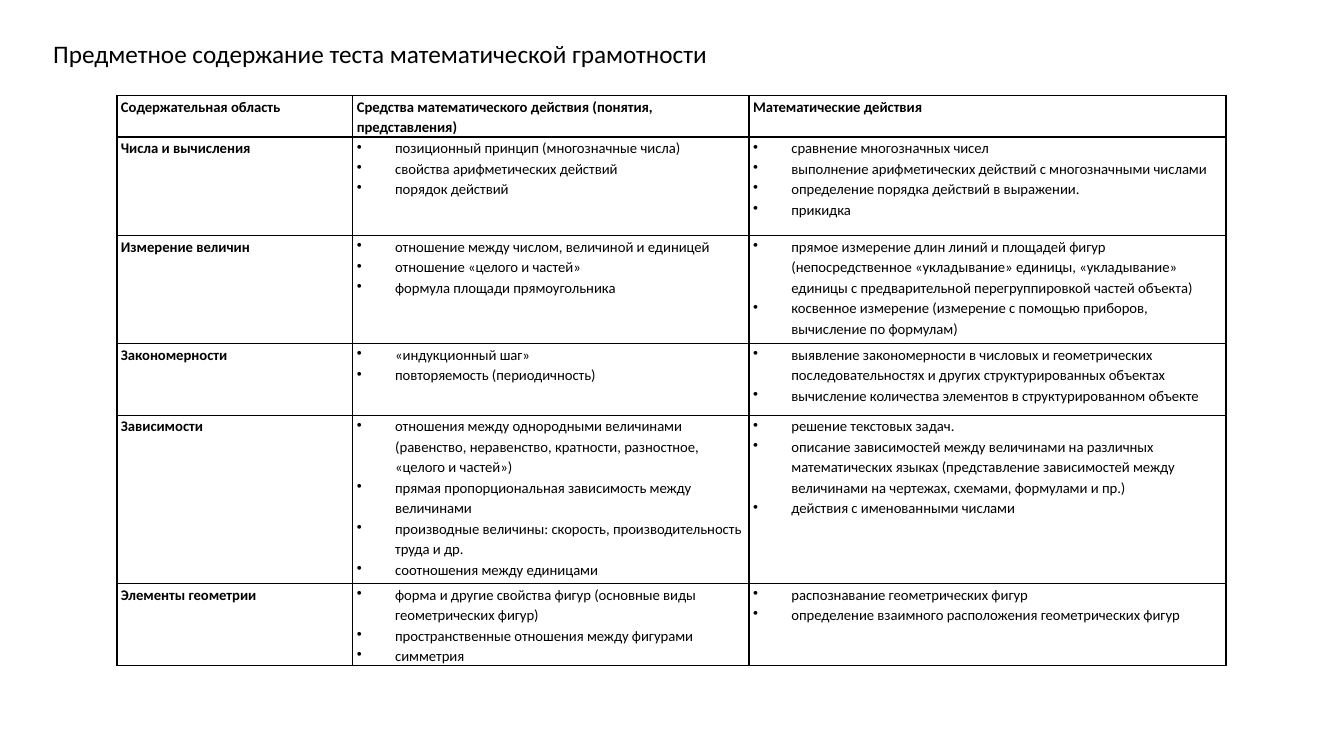
import dataclasses

import lxml.etree
import pptx
import pptx.dml.color
import pptx.enum.text
import pptx.oxml.ns
import pptx.util

PX = 9144  # EMU per px, 100 px to the inch
FONT = "Calibri"
BLACK = pptx.dml.color.RGBColor(0x00, 0x00, 0x00)
TITLE = "Предметное содержание теста математической грамотности"
COLUMN_WIDTHS = (234, 393, 473)
CELL_MARGIN = 4
BULLET_INDENT = 38
BORDER_WIDTH = pptx.util.Pt(1)


@dataclasses.dataclass(frozen=True)
class ContentArea:
    name: str
    height: int
    means: tuple[str, ...]
    actions: tuple[str, ...]


HEADER_HEIGHT = 41
HEADERS = (
    "Содержательная область",
    "Средства математического действия (понятия, представления)",
    "Математические действия",
)
AREAS = (
    ContentArea(
        "Числа и вычисления", 98,
        ("позиционный принцип (многозначные числа)",
         "свойства арифметических действий",
         "порядок действий"),
        ("сравнение многозначных чисел",
         "выполнение арифметических действий с многозначными числами",
         "определение порядка действий в выражении.",
         "прикидка"),
    ),
    ContentArea(
        "Измерение величин", 107,
        ("отношение между числом, величиной и единицей",
         "отношение «целого и частей»",
         "формула площади прямоугольника"),
        ("прямое измерение длин линий и площадей фигур (непосредственное "
         "«укладывание» единицы, «укладывание» единицы с предварительной "
         "перегруппировкой частей объекта)",
         "косвенное измерение (измерение с помощью приборов, "
         "вычисление по формулам)"),
    ),
    ContentArea(
        "Закономерности", 71,
        ("«индукционный шаг»",
         "повторяемость (периодичность)"),
        ("выявление закономерности в числовых и геометрических "
         "последовательностях и других структурированных объектах",
         "вычисление количества элементов в структурированном объекте"),
    ),
    ContentArea(
        "Зависимости", 167,
        ("отношения между однородными величинами (равенство, неравенство, "
         "кратности, разностное, «целого и частей»)",
         "прямая пропорциональная зависимость между величинами",
         "производные величины: скорость, производительность труда и др.",
         "соотношения между единицами"),
        ("решение текстовых задач.",
         "описание зависимостей между величинами на различных математических "
         "языках (представление зависимостей между величинами на чертежах, "
         "схемами, формулами и пр.)",
         "действия с именованными числами"),
    ),
    ContentArea(
        "Элементы геометрии", 81,
        ("форма и другие свойства фигур (основные виды геометрических фигур)",
         "пространственные отношения между фигурами",
         "симметрия"),
        ("распознавание геометрических фигур",
         "определение взаимного расположения геометрических фигур"),
    ),
)


def style_runs(para, size: float, bold: bool = False) -> None:
    for span in para.runs:
        span.font.name = FONT
        span.font.size = pptx.util.Pt(size)
        span.font.bold = bold
        span.font.color.rgb = BLACK


def add_bullet(para) -> None:
    properties = para._p.get_or_add_pPr()
    properties.set("marL", str(BULLET_INDENT * PX))
    properties.set("indent", str(-BULLET_INDENT * PX))
    bullet = lxml.etree.SubElement(properties, pptx.oxml.ns.qn("a:buChar"))
    bullet.set("char", "•")


def add_borders(cell) -> None:
    properties = cell._tc.get_or_add_tcPr()
    for side in ("a:lnL", "a:lnR", "a:lnT", "a:lnB"):
        line = lxml.etree.SubElement(properties, pptx.oxml.ns.qn(side))
        line.set("w", str(BORDER_WIDTH))
        fill = lxml.etree.SubElement(line, pptx.oxml.ns.qn("a:solidFill"))
        color = lxml.etree.SubElement(fill, pptx.oxml.ns.qn("a:srgbClr"))
        color.set("val", str(BLACK))


def fill_cell(cell, lines: tuple[str, ...], heading: bool) -> None:
    add_borders(cell)
    cell.fill.background()
    cell.margin_left = cell.margin_right = CELL_MARGIN * PX
    cell.margin_top = cell.margin_bottom = 0
    cell.text_frame.text = "\n".join(lines)
    for para in cell.text_frame.paragraphs:
        if not heading:
            add_bullet(para)
        para.line_spacing = 1.15
        para.space_before = pptx.util.Pt(0)
        para.space_after = pptx.util.Pt(10 if heading else 0)
        style_runs(para, 10.5, bold=heading)


def add_content_table(page) -> None:
    heights = (HEADER_HEIGHT, *(area.height for area in AREAS))
    table = page.shapes.add_table(
        len(heights), len(COLUMN_WIDTHS), 116 * PX, 95 * PX,
        sum(COLUMN_WIDTHS) * PX, sum(heights) * PX,
    ).table
    table.first_row = table.horz_banding = False
    for column, width in zip(table.columns, COLUMN_WIDTHS):
        column.width = width * PX
    for row, height in zip(table.rows, heights):
        row.height = height * PX

    # Header row, then one row for each content area
    for column_index, header in enumerate(HEADERS):
        fill_cell(table.cell(0, column_index), (header,), heading=True)
    for row_index, area in enumerate(AREAS, start=1):
        columns = ((area.name,), area.means, area.actions)
        for column_index, lines in enumerate(columns):
            fill_cell(table.cell(row_index, column_index), lines,
                      heading=column_index == 0)


def add_title(page) -> None:
    box = page.shapes.add_textbox(43 * PX, 33 * PX, 1157 * PX, 40 * PX)
    frame = box.text_frame
    frame.word_wrap = True
    frame.auto_size = pptx.enum.text.MSO_AUTO_SIZE.SHAPE_TO_FIT_TEXT
    frame.text = TITLE
    style_runs(frame.paragraphs[0], 18)


def main() -> None:
    deck = pptx.Presentation()
    deck.slide_width = 1333 * PX
    deck.slide_height = 750 * PX
    page = deck.slides.add_slide(deck.slide_layouts[6])
    add_content_table(page)
    add_title(page)
    deck.save("out.pptx")


if __name__ == "__main__":
    main()
